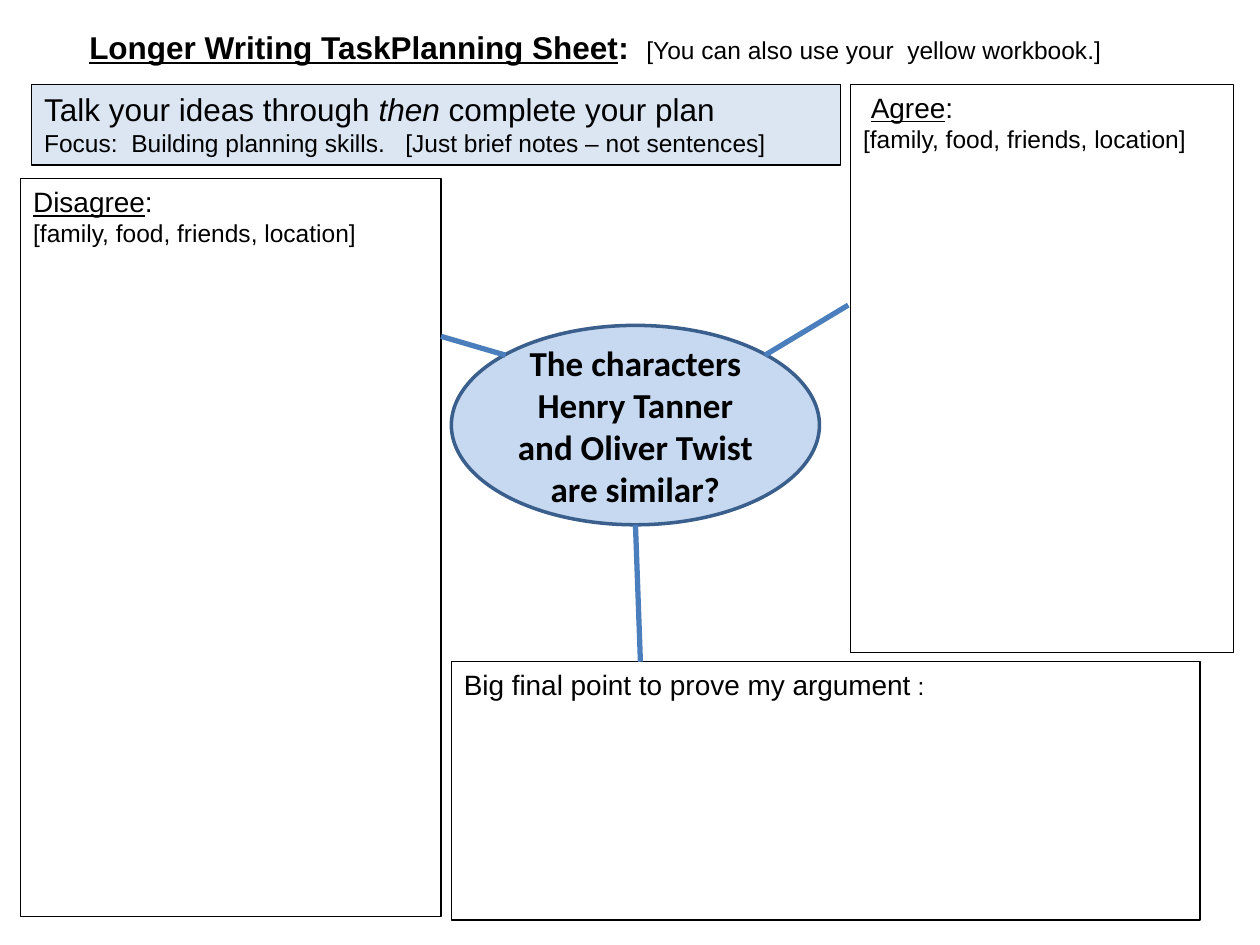
from dataclasses import dataclass

from lxml import etree
from pptx import Presentation
from pptx.dml.color import RGBColor
from pptx.enum.shapes import MSO_CONNECTOR, MSO_SHAPE
from pptx.enum.text import MSO_ANCHOR, MSO_AUTO_SIZE, PP_ALIGN
from pptx.oxml.ns import qn
from pptx.util import Cm, Pt

RECT, OVAL = MSO_SHAPE.RECTANGLE, MSO_SHAPE.OVAL
STRAIGHT = MSO_CONNECTOR.STRAIGHT
TOP, MIDDLE = MSO_ANCHOR.TOP, MSO_ANCHOR.MIDDLE
LEFT, CENTER = PP_ALIGN.LEFT, PP_ALIGN.CENTER
NO_AUTOFIT = MSO_AUTO_SIZE.NONE


@dataclass(frozen=True)
class Theme:
    body_font: str = "Arial"
    topic_font: str = "Calibri"
    text: RGBColor = RGBColor(0x00, 0x00, 0x00)
    paper: RGBColor = RGBColor(0xFF, 0xFF, 0xFF)
    banner: RGBColor = RGBColor(0xDC, 0xE6, 0xF2)
    topic: RGBColor = RGBColor(0xC6, 0xD9, 0xF1)
    topic_line: RGBColor = RGBColor(0x3A, 0x5F, 0x8C)
    link: RGBColor = RGBColor(0x4B, 0x7E, 0xBC)
    topic_size: Pt = Pt(20)
    title_size: Pt = Pt(18)
    heading_size: Pt = Pt(16)
    note_size: Pt = Pt(14)


THEME = Theme()


def write(tf, paragraphs, font=THEME.body_font, align=LEFT, anchor=TOP):
    tf.word_wrap = True
    tf.auto_size = NO_AUTOFIT
    tf.vertical_anchor = anchor
    for i, (size, runs) in enumerate(paragraphs):
        p = tf.add_paragraph() if i else tf.paragraphs[0]
        p.alignment = align
        p.font.name, p.font.size = font, size
        p.font.color.rgb = THEME.text
        for text, style in runs:
            r = p.add_run()
            r.text = text
            for name, value in style.items():
                setattr(r.font, name, value)


def add_title(s, x, y, w, h, runs):
    title = s.shapes.title
    title.left, title.top, title.width, title.height = map(Cm, (x, y, w, h))
    title.text_frame.margin_left = Cm(0.96)
    write(title.text_frame, [(THEME.title_size, runs)])


def add_box(s, kind, x, y, w, h, fill, line=THEME.text, weight=0.75):
    sp = s.shapes.add_shape(kind, Cm(x), Cm(y), Cm(w), Cm(h))
    sp.shadow.inherit = False
    sp.fill.solid()
    sp.fill.fore_color.rgb = fill
    sp.line.color.rgb = line
    sp.line.width = Pt(weight)
    return sp


def add_panel(s, x, y, w, h, paragraphs, fill=THEME.paper):
    write(add_box(s, RECT, x, y, w, h, fill).text_frame, paragraphs)


def add_topic(s, x, y, w, h, text):
    sp = add_box(s, OVAL, x, y, w, h, THEME.topic, THEME.topic_line, 2)
    write(sp.text_frame, [(THEME.topic_size, [(text, {"bold": True})])],
          THEME.topic_font, CENTER, MIDDLE)


def add_link(s, x1, y1, x2, y2):
    line = s.shapes.add_connector(STRAIGHT, Cm(x1), Cm(y1), Cm(x2), Cm(y2))
    line.line.color.rgb = THEME.link
    line.line.width = Pt(3)
    etree.SubElement(line._element.spPr, qn("a:effectLst"))


def main():
    prs = Presentation()
    prs.slide_width, prs.slide_height = Cm(25.4), Cm(19.05)
    s = prs.slides.add_slide(prs.slide_layouts[5])
    underlined = {"underline": True}
    prompts = (THEME.note_size, [("[family, food, friends, location]", {})])

    add_title(s, 0.84, 0.44, 22.23, 1.02, [
        ("Longer Writing TaskPlanning Sheet", {"bold": True, "underline": True}),
        (":  ", {"bold": True}),
        ("[You can also use your  yellow workbook.]", {"size": THEME.note_size}),
    ])
    add_panel(s, 0.64, 1.7, 16.31, 1.63, [
        (THEME.title_size, [("Talk your ideas through ", {}),
                            ("then", {"italic": True}),
                            (" complete your plan", {})]),
        (THEME.note_size, [("Focus:  Building planning skills.   "
                            "[Just brief notes – not sentences]", {})]),
    ], THEME.banner)
    add_topic(s, 9.1, 6.56, 7.42, 4.02,
              "The characters Henry Tanner and Oliver Twist are similar?")
    add_panel(s, 9.1, 13.34, 15.09, 5.21, [
        (THEME.heading_size, [("Big final point to prove my argument", {}),
                              (" :", {"size": THEME.note_size})]),
    ])
    add_panel(s, 17.15, 1.7, 7.72, 11.46, [
        (THEME.heading_size, [(" ", {}), ("Agree", underlined), (":", {})]),
        prompts,
    ])
    add_panel(s, 0.42, 3.6, 8.47, 14.88, [
        (THEME.heading_size, [("Disagree", underlined), (":", {})]),
        prompts,
    ])
    for ends in ((17.1, 6.15, 15.42, 7.16),
                 (12.91, 13.34, 12.81, 10.58),
                 (10.19, 7.16, 8.89, 6.78)):
        add_link(s, *ends)

    prs.save("out.pptx")


if __name__ == "__main__":
    main()
